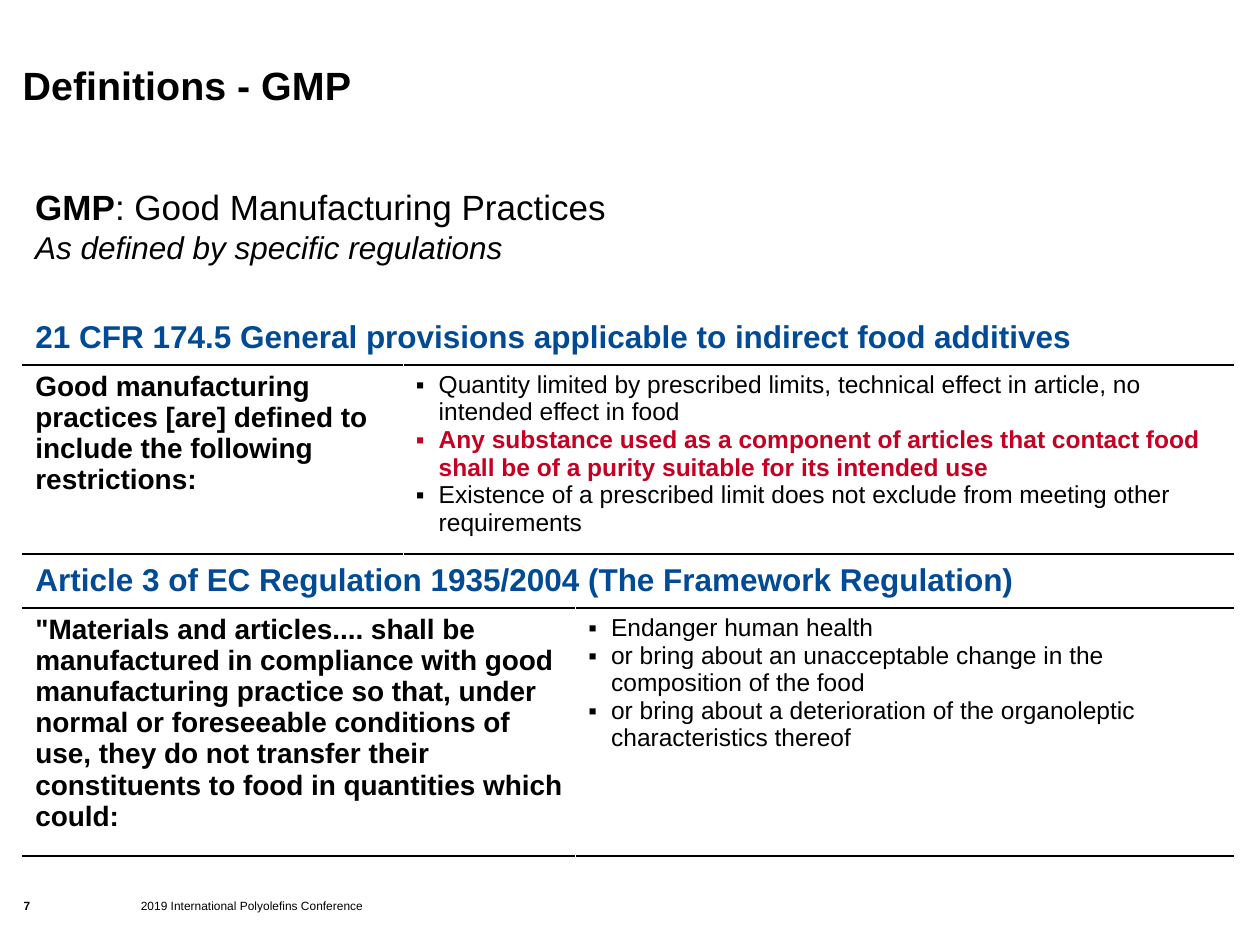
from lxml import etree
from pptx import Presentation
from pptx.dml.color import RGBColor
from pptx.enum.text import MSO_ANCHOR
from pptx.oxml.ns import qn
from pptx.util import Pt

BLACK = RGBColor(0x00, 0x00, 0x00)
WHITE = RGBColor(0xFF, 0xFF, 0xFF)
BLUE = RGBColor(0x00, 0x4A, 0x96)
RED = RGBColor(0xC5, 0x00, 0x22)
TOP = MSO_ANCHOR.TOP
FONT = "Arial"

HEADING = {"size": Pt(18), "bold": True, "color": BLUE}
LEAD = {"size": Pt(16), "bold": True}
ITEM = {"size": Pt(14), "bold": False}
KEY_ITEM = {"size": Pt(14), "bold": True, "color": RED}
SMALL = {"size": Pt(6.8)}


class SlideBuilder:
    def __init__(self, page):
        self.page = page

    def add_span(self, para, text, style):
        """Add one formatted span to a paragraph."""
        span = para.add_run()
        span.text = text
        values = {"name": FONT, "color": BLACK, **style}
        span.font.color.rgb = values.pop("color")
        for name, value in values.items():
            setattr(span.font, name, value)

    def fill_frame(self, frame, paragraphs, bullet=False):
        """Each paragraph is a list of (text, style) spans."""
        for index, spans in enumerate(paragraphs):
            para = frame.paragraphs[0] if index == 0 else frame.add_paragraph()
            if bullet:
                self.add_bullet(para)
            for text, style in spans:
                self.add_span(para, text, style)

    def add_bullet(self, para):
        properties = para._p.get_or_add_pPr()
        properties.set("marL", str(Pt(13)))
        properties.set("indent", str(-Pt(13)))
        etree.SubElement(properties, qn("a:buFont")).set("typeface", FONT)
        etree.SubElement(properties, qn("a:buChar")).set("char", "▪")

    def text(self, left, top, width, height, paragraphs, inset=True):
        box = self.page.shapes.add_textbox(Pt(left), Pt(top), Pt(width), Pt(height))
        frame = box.text_frame
        frame.word_wrap = True
        frame.vertical_anchor = TOP
        if not inset:
            frame.margin_left = frame.margin_top = 0
            frame.margin_right = frame.margin_bottom = 0
        self.fill_frame(frame, paragraphs)

    def border(self, cell, top, bottom):
        properties = cell._tc.get_or_add_tcPr()
        colors = {"L": WHITE, "R": WHITE, "T": top, "B": bottom}
        for position, (side, color) in enumerate(colors.items()):
            line = etree.Element(qn(f"a:ln{side}"), w=str(Pt(1)))
            fill = etree.SubElement(line, qn("a:solidFill"))
            etree.SubElement(fill, qn("a:srgbClr")).set("val", str(color))
            properties.insert(position, line)

    def regulation(self, top, widths, heights, heading, lead, items):
        """A table with a merged heading, a lead sentence and bullet items."""
        table = self.page.shapes.add_table(
            2, 2, Pt(13), Pt(top), Pt(sum(widths)), Pt(sum(heights))).table
        table.first_row = table.horz_banding = False
        for column, width in zip(table.columns, widths):
            column.width = Pt(width)
        for row, height in zip(table.rows, heights):
            row.height = Pt(height)
        for row, color in zip(table.rows, (WHITE, BLACK)):
            for cell in row.cells:
                cell.fill.background()
                self.border(cell, color, BLACK)
        table.cell(0, 0).merge(table.cell(0, 1))
        self.fill_frame(table.cell(0, 0).text_frame, [[(heading, HEADING)]])
        self.fill_frame(table.cell(1, 0).text_frame, [[(lead, LEAD)]])
        self.fill_frame(table.cell(1, 1).text_frame, [[item] for item in items], bullet=True)


def main():
    deck = Presentation()
    deck.slide_width, deck.slide_height = Pt(720), Pt(540)
    builder = SlideBuilder(deck.slides.add_slide(deck.slide_layouts[6]))

    # Title
    builder.text(13, 35, 693, 66,
                 [[("Definitions - GMP", {"size": Pt(22.5), "bold": True})]], inset=False)

    # Footer
    builder.text(80.5, 513.5, 199, 13,
                 [[("2019 International Polyolefins Conference", SMALL)]], inset=False)
    builder.text(13.5, 513.5, 23, 12, [[("7", {**SMALL, "bold": True})]], inset=False)

    # Regulations
    builder.regulation(
        179, (217.5, 474.5), (29.5, 102),
        "21 CFR 174.5 General provisions applicable to indirect food additives",
        "Good manufacturing practices [are] defined to include the following restrictions:",
        [("Quantity limited by prescribed limits, technical effect in article, "
          "no intended effect in food", ITEM),
         ("Any substance used as a component of articles that contact food "
          "shall be of a purity suitable for its intended use", KEY_ITEM),
         ("Existence of a prescribed limit does not exclude from meeting "
          "other requirements", ITEM)])
    builder.regulation(
        318, (316, 376), (29.5, 131.5),
        "Article 3 of EC Regulation 1935/2004 (The Framework Regulation)",
        "\"Materials and articles.... shall be manufactured in compliance with good "
        "manufacturing practice so that, under normal or foreseeable conditions of use, "
        "they do not transfer their constituents to food in quantities which could:",
        [("Endanger human health", ITEM),
         ("or bring about an unacceptable change in the composition of the food", ITEM),
         ("or bring about a deterioration of the organoleptic characteristics thereof", ITEM)])

    # Definition
    builder.text(13, 102.5, 564, 53, [
        [("GMP", {"size": Pt(20), "bold": True}),
         (": Good Manufacturing Practices", {"size": Pt(20)})],
        [("As defined by specific regulations", {"size": Pt(18), "italic": True})]])

    deck.save("out.pptx")


if __name__ == "__main__":
    main()
